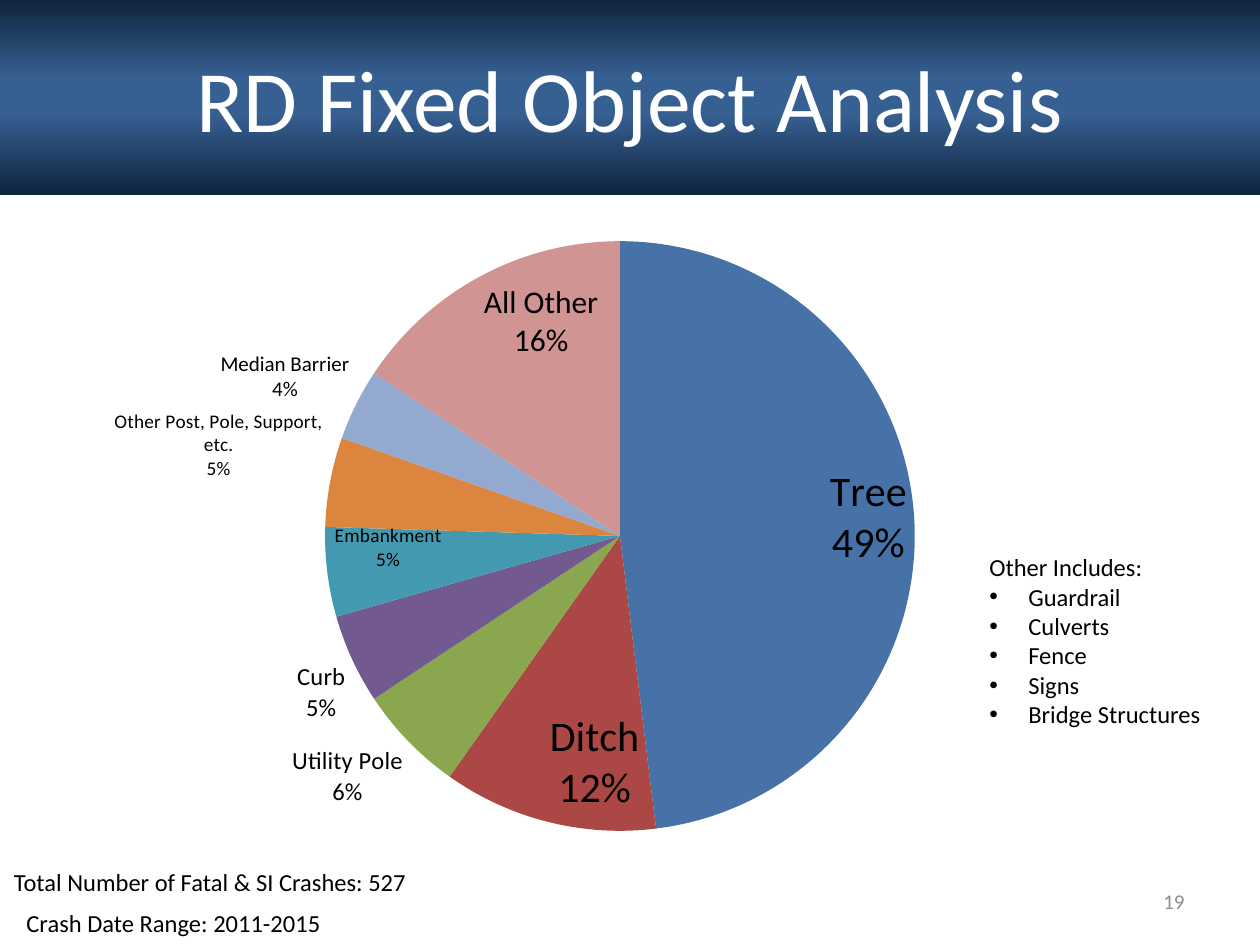
import pptx
import pptx.util
import pptx.chart.data
import pptx.dml.color
import pptx.enum.chart
import pptx.enum.shapes
import pptx.enum.text
import pptx.oxml.ns
from lxml import etree

PX = 914400 / 126
FONT = "Calibri"
COLORS = {
    "navy": "0F243E", "blue": "376092", "white": "FFFFFF", "black": "000000", "gray": "8C8C8C",
    "tree": "4672A8", "ditch": "AB4744", "utility": "8AA64F", "curb": "725990",
    "embankment": "4299B0", "post": "DC853E", "median": "93A9D0", "other": "D09493",
}
# category, percent, colour, label size, label position
SLICES = [
    ("Tree", 49, "tree", 24, "INSIDE_END"),
    ("Ditch", 12, "ditch", 24, "INSIDE_END"),
    ("Utility Pole", 6, "utility", 14, "OUTSIDE_END"),
    ("Curb", 5, "curb", 14, "OUTSIDE_END"),
    ("Embankment", 5, "embankment", 11, "INSIDE_END"),
    ("Other Post, Pole, Support, etc.", 5, "post", 11, "OUTSIDE_END"),
    ("Median Barrier", 4, "median", 12, "OUTSIDE_END"),
    ("All Other", 16, "other", 18, "INSIDE_END"),
]
ALIGN = pptx.enum.text.PP_ALIGN
ANCHOR = pptx.enum.text.MSO_ANCHOR
qn = pptx.oxml.ns.qn


def px(n):
    return pptx.util.Emu(round(n * PX))


def rgb(name):
    return pptx.dml.color.RGBColor.from_string(COLORS[name])


def style_font(font, size, color):
    font.name = FONT
    font.size = pptx.util.Pt(size)
    font.color.rgb = rgb(color)


def add_run(p, text, size, color, align):
    p.alignment = align
    r = p.add_run()
    r.text = text
    style_font(r.font, size, color)


def add_text(s, box, lines, size=14, color="black", align=ALIGN.CENTER, anchor=ANCHOR.TOP):
    """Add a text box with one paragraph per line and return its text frame."""
    tf = s.shapes.add_textbox(*map(px, box)).text_frame
    tf.word_wrap = True
    tf.vertical_anchor = anchor
    for i, line in enumerate(lines):
        p = tf.add_paragraph() if i else tf.paragraphs[0]
        add_run(p, line, size, color, align)
    return tf


def add_title_bar(s, box):
    sp = s.shapes.add_shape(pptx.enum.shapes.MSO_SHAPE.RECTANGLE, *map(px, box))
    sp.shadow.inherit = False
    sp.line.fill.background()
    sp.fill.gradient()
    sp.fill.gradient_angle = 270
    stops = sp._element.spPr.find(".//" + qn("a:gsLst"))
    for stop in list(stops):
        stops.remove(stop)
    for percent, color in ((0, "navy"), (40, "blue"), (58, "blue"), (100, "navy")):
        stop = etree.SubElement(stops, qn("a:gs"), pos=str(percent * 1000))
        etree.SubElement(stop, qn("a:srgbClr"), val=COLORS[color])
    sp.text_frame.vertical_anchor = ANCHOR.MIDDLE
    add_run(sp.text_frame.paragraphs[0], "RD Fixed Object Analysis", 50, "white", ALIGN.CENTER)


def add_other_list(s, box):
    items = ["Guardrail", "Culverts", "Fence", "Signs", "Bridge Structures"]
    tf = add_text(s, box, ["Other Includes:"] + items, align=ALIGN.LEFT)
    indent = px(39)
    for p in tf.paragraphs[1:]:
        pPr = p._p.get_or_add_pPr()
        pPr.set("marL", str(indent))
        pPr.set("indent", str(-indent))
        etree.SubElement(pPr, qn("a:buFont"), typeface="Arial")
        etree.SubElement(pPr, qn("a:buChar"), char="•")


def set_plot_layout(chart, **fractions):
    """Fix the inner plot area as fractions of the chart."""
    plot_area = chart._chartSpace.chart.plotArea
    layout = plot_area.find(qn("c:layout"))
    if layout is None:
        layout = etree.Element(qn("c:layout"))
        plot_area.insert(0, layout)
    manual = etree.SubElement(layout, qn("c:manualLayout"))
    settings = {"layoutTarget": "inner", "xMode": "edge", "yMode": "edge", **fractions}
    for tag, val in settings.items():
        etree.SubElement(manual, qn("c:" + tag), val=str(val))


def style_slice(point, color, size, position):
    """Colour one slice and label it with its category above its percent."""
    point.format.fill.solid()
    point.format.fill.fore_color.rgb = rgb(color)
    label = point.data_label
    style_font(label.font, size, "black")
    label.position = getattr(pptx.enum.chart.XL_LABEL_POSITION, position)
    dLbl = label._dLbl
    num_fmt = etree.Element(qn("c:numFmt"), formatCode='0"%"', sourceLinked="0")
    dLbl.find(qn("c:idx")).addnext(num_fmt)
    dLbl.find(qn("c:showCatName")).set("val", "1")
    etree.SubElement(dLbl, qn("c:separator")).text = "\n"


def add_pie(s, box):
    data = pptx.chart.data.CategoryChartData(number_format='0"%"')
    data.categories = [row[0] for row in SLICES]
    data.add_series("Series 1", [row[1] for row in SLICES])
    chart = s.shapes.add_chart(pptx.enum.chart.XL_CHART_TYPE.PIE, *map(px, box), data).chart
    chart.has_legend = False
    chart.has_title = False
    style_font(chart.font, 10, "black")
    set_plot_layout(chart, x=0.24, y=0.03, w=0.52, h=0.95)
    plot = chart.plots[0]
    plot.vary_by_categories = False
    for i, (_, _, color, size, position) in enumerate(SLICES):
        style_slice(plot.series[0].points[i], color, size, position)


def main():
    prs = pptx.Presentation()
    prs.slide_width, prs.slide_height = px(1260), px(945)
    s = prs.slides.add_slide(prs.slide_layouts[6])
    add_title_bar(s, (0, 0, 1260, 195))
    add_text(s, (903, 876, 294, 50), ["19"], 12, "gray", ALIGN.RIGHT, ANCHOR.MIDDLE)
    add_text(s, (0, 902, 347, 42), ["Crash Date Range: 2011-2015"])
    add_text(s, (0, 861, 420, 42), ["Total Number of Fatal & SI Crashes: 527"])
    add_other_list(s, (977, 546, 253, 210))
    add_pie(s, (53, 221, 1134, 624))
    prs.save("out.pptx")


if __name__ == "__main__":
    main()
